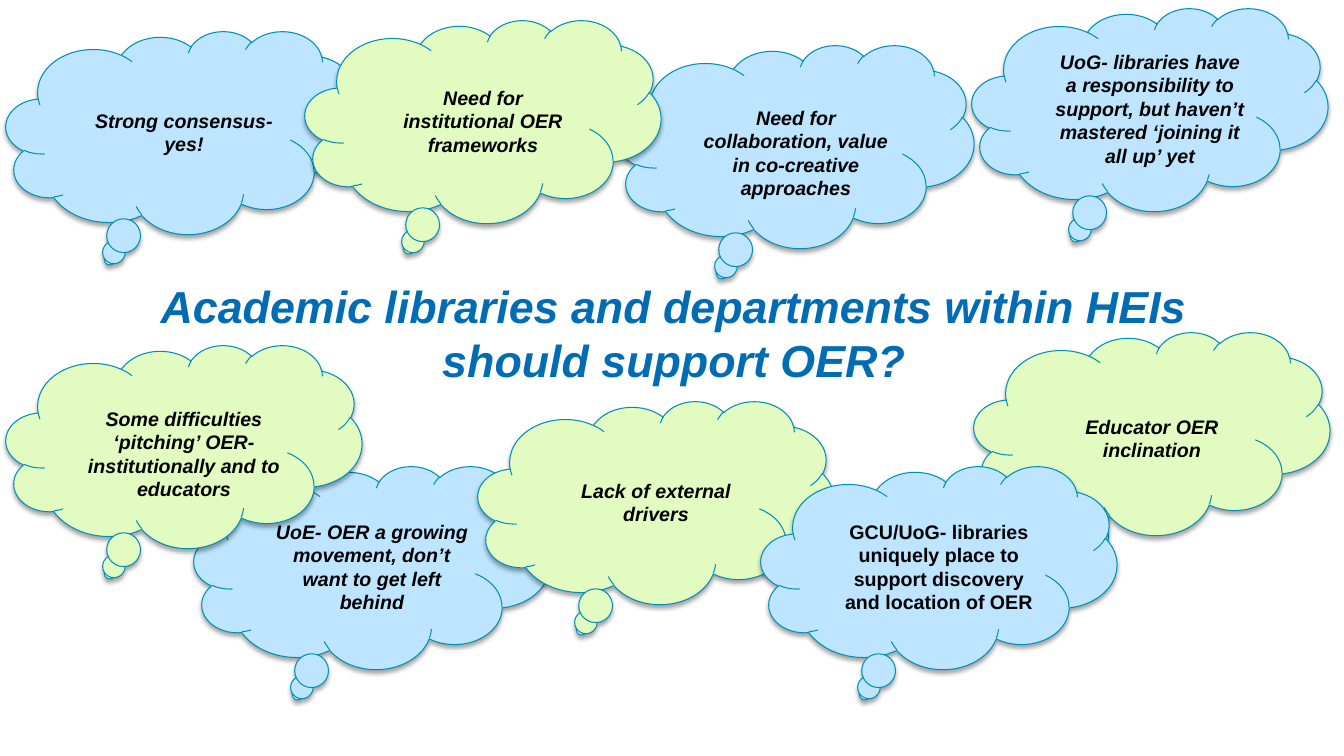
"""Build a slide of thought clouds around a question on library support for OER."""
import pptx
import pptx.util
import pptx.dml.color
import pptx.enum.shapes
import pptx.enum.text
from lxml import etree

QUESTION = "Academic libraries and departments within HEIs should support OER?"
QUESTION_BOX = (92, 274, 1164, 192)

CLOUDS = [
    dict(text="Strong consensus- yes!", lines=2, left=6, top=31, tint="blue"),
    dict(text="Need for collaboration, value in co-creative approaches",
         lines=4, left=618, top=45, tint="blue", drop=7),
    dict(text="UoG- libraries have a responsibility to support, but haven’t mastered ‘joining it all up’ yet",
         lines=5, left=972, top=8, tint="blue"),
    dict(text="UoE- OER a growing movement, don’t want to get left behind",
         lines=4, left=194, top=466, tint="blue", filled=False),
    dict(text="Need for institutional OER frameworks", lines=3, left=305, top=20, tint="green"),
    dict(text="Some difficulties ‘pitching’ OER- institutionally and to educators",
         lines=4, left=6, top=345, tint="green", drop=8, filled=False),
    dict(text="Lack of external drivers", lines=2, left=478, top=401, tint="green", filled=False),
    dict(text="Educator OER inclination", lines=2, left=974, top=332, tint="green", drop=5, filled=False),
    dict(text="GCU/UoG- libraries uniquely place to support discovery and location of OER",
         lines=4, left=761, top=466, tint="blue", italic=False),
]

THEME = dict(font="Arial", question_size=32, label_size=14, question="006CB4", label="000000",
             outline="008FB8", blue="BDE5FF", green="E2FBC1")
SLIDE_SIZE = (1344, 756)
CLOUD_SIZE = (356, 203)
LABEL_WIDTH, LINE_HEIGHT, LABEL_PADDING = 213, 24, 10
EMU_PER_PX = 914400 / 100.8
SHADOW = (
    '<a:effectLst xmlns:a="http://schemas.openxmlformats.org/drawingml/2006/main">'
    '<a:outerShdw blurRad="39370" dist="22860" dir="5400000" rotWithShape="0">'
    '<a:srgbClr val="000000"><a:alpha val="35000"/></a:srgbClr>'
    '</a:outerShdw></a:effectLst>'
)


def px(*lengths):
    return [round(length * EMU_PER_PX) for length in lengths]


def color(name):
    return pptx.dml.color.RGBColor.from_string(THEME[name])


def add_text(slide, box, text, role, italic=True):
    shape = slide.shapes.add_textbox(*px(*box))
    frame = shape.text_frame
    frame.word_wrap = True
    paragraph = frame.paragraphs[0]
    paragraph.alignment = pptx.enum.text.PP_ALIGN.CENTER
    run = paragraph.add_run()
    run.text = text
    run.font.name = THEME["font"]
    run.font.size = pptx.util.Pt(THEME[role + "_size"])
    run.font.bold = True
    run.font.italic = italic
    run.font.color.rgb = color(role)
    return shape


def add_cloud(slide, text, lines, left, top, tint, drop=0, filled=True, italic=True):
    width, height = CLOUD_SIZE
    cloud = slide.shapes.add_shape(pptx.enum.shapes.MSO_SHAPE.CLOUD_CALLOUT,
                                   *px(left, top, width, height))
    cloud.fill.solid()
    cloud.fill.fore_color.rgb = color(tint)
    cloud.line.color.rgb = color("outline")
    cloud.line.width = pptx.util.Pt(0.75)
    cloud._element.spPr.append(etree.fromstring(SHADOW))
    label_height = lines * LINE_HEIGHT + LABEL_PADDING
    label_left = left + (width - LABEL_WIDTH) / 2
    label_top = top + (height - label_height) / 2 + drop
    label = add_text(slide, (label_left, label_top, LABEL_WIDTH, label_height), text, "label", italic)
    if filled:
        label.fill.solid()
        label.fill.fore_color.rgb = color(tint)


def main():
    presentation = pptx.Presentation()
    presentation.slide_width, presentation.slide_height = px(*SLIDE_SIZE)
    slide = presentation.slides.add_slide(presentation.slide_layouts[6])
    add_text(slide, QUESTION_BOX, QUESTION, "question")
    for cloud in CLOUDS:
        add_cloud(slide, **cloud)
    presentation.save("out.pptx")


if __name__ == "__main__":
    main()
